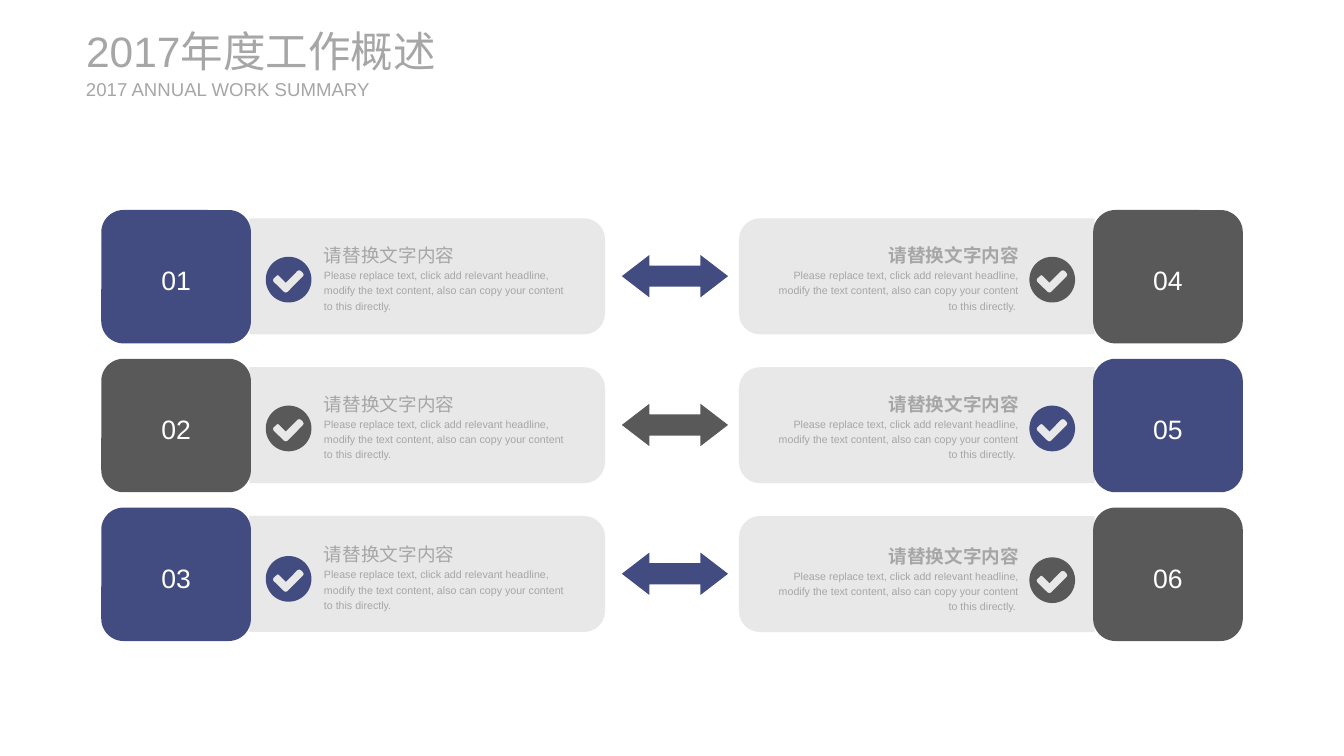
from copy import deepcopy
from math import cos, pi, sin

from lxml import etree
from pptx import Presentation
from pptx.dml.color import RGBColor
from pptx.enum.shapes import MSO_SHAPE
from pptx.enum.text import MSO_ANCHOR, MSO_AUTO_SIZE, PP_ALIGN
from pptx.oxml.ns import qn
from pptx.util import Pt

ROUND_RECT = MSO_SHAPE.ROUNDED_RECTANGLE
HALF_ROUND = MSO_SHAPE.ROUND_2_SAME_RECTANGLE
ARROW = MSO_SHAPE.LEFT_RIGHT_ARROW
TOP, MIDDLE = MSO_ANCHOR.TOP, MSO_ANCHOR.MIDDLE
LEFT, CENTER, RIGHT = PP_ALIGN.LEFT, PP_ALIGN.CENTER, PP_ALIGN.RIGHT
GROW = MSO_AUTO_SIZE.SHAPE_TO_FIT_TEXT

BLUE, DARK, PANEL, GRAY, WHITE = "424C80", "595959", "E6E6E6", "A6A6A6", "FFFFFF"
HEADINGS = [
    ("2017年度工作概述", 32, (64.8, 18.7, 311, 38.9)),
    ("2017 ANNUAL WORK SUMMARY", 14, (64.8, 58.3, 221, 17.3)),
]
ITEM_TITLE = "请替换文字内容"
ITEM_BODY = ("Please replace text, click add relevant headline, modify the text "
             "content, also can copy your content to this directly.")
SIDES = [
    {"items": [("01", BLUE, 0), ("02", DARK, 0), ("03", BLUE, 1.2)],
     "number": 76.3, "panel": 187.9, "turn": 90, "icon": 200.2,
     "text": 244, "align": LEFT, "bold": False, "tail": ""},
    {"items": [("04", DARK, 0), ("05", BLUE, 0), ("06", DARK, 2.2)],
     "number": 823.4, "panel": 556.6, "turn": 270, "icon": 775.4,
     "text": 581.7, "align": RIGHT, "bold": True, "tail": " "},
]
ARROW_COLORS = [BLUE, DARK, BLUE]
ROW_TOP, ROW_STEP = 158.2, 112.1
NUMBER_W, NUMBER_H = 112.7, 100.5
PANEL_W, PANEL_H = 267.8, 87.4
ICON_R = 17.2
TICK = [(28.1, 12.2), (26.6, 10.6), (25.2, 10.1), (23.8, 10.6), (15.1, 19.4),
        (10.1, 14.4), (9.1, 13.7), (8.2, 14.2), (5.8, 16.4), (5.4, 17.5),
        (5.8, 18.8), (13.7, 26.5), (15, 27), (16.4, 26.5), (28.1, 14.7),
        (28.6, 13.5)]


def rgb(color):
    return RGBColor.from_string(color)


def paint(shape, color):
    shape.shadow.inherit = False
    shape.fill.solid()
    shape.fill.fore_color.rgb = rgb(color)
    shape.line.fill.background()


def add_shape(kind, x, y, w, h, color):
    shape = s.shapes.add_shape(kind, Pt(x), Pt(y), Pt(w), Pt(h))
    paint(shape, color)
    return shape


def setup_frame(shape, anchor):
    tf = shape.text_frame
    frame = {"word_wrap": True, "vertical_anchor": anchor, "margin_left": 0,
             "margin_right": 0, "margin_top": 0, "margin_bottom": 0}
    for name, value in frame.items():
        setattr(tf, name, value)
    return tf


def add_textbox(x, y, w, h, anchor):
    tf = setup_frame(s.shapes.add_textbox(Pt(x), Pt(y), Pt(w), Pt(h)), anchor)
    tf.auto_size = GROW
    return tf


def add_run(p, text, size, color, bold=False):
    r = p.add_run()
    r.text = text
    for name, value in {"size": Pt(size), "name": "Arial", "bold": bold}.items():
        setattr(r.font, name, value)
    r.font.color.rgb = rgb(color)
    return r


def add_panel(x, y, turn):
    dx = (PANEL_W - PANEL_H) / 2
    panel = add_shape(HALF_ROUND, x + dx, y - dx, PANEL_H, PANEL_W, PANEL)
    panel.rotation = turn
    panel.adjustments[0] = 0.18
    fill = panel.fill.fore_color._xFill.find(qn("a:srgbClr"))
    etree.SubElement(fill, qn("a:alpha"), val="90000")


def add_check(x, y, color):
    circle = [(ICON_R + ICON_R * cos(i * pi / 36), ICON_R + ICON_R * sin(i * pi / 36))
              for i in range(72)]
    outlines = [[(px * 100, py * 100) for px, py in pts] for pts in (circle, TICK)]
    fb = s.shapes.build_freeform(*outlines[0][0], scale=Pt(1) / 100)
    fb.add_line_segments(outlines[0][1:], close=True)
    fb.move_to(*outlines[1][0])
    fb.add_line_segments(outlines[1][1:], close=True)
    paint(fb.convert_to_shape(Pt(x), Pt(y)), color)


def add_item_text(x, y, side):
    p = add_textbox(x, y, 185.8, 55.4, TOP).paragraphs[0]
    for name, value in {"alignment": side["align"], "line_spacing": 1.2,
                        "space_before": Pt(2.8)}.items():
        setattr(p, name, value)
    r = add_run(p, ITEM_TITLE, 14, GRAY, side["bold"])
    p.add_line_break()
    p._p[-1].append(deepcopy(r._r.rPr))
    add_run(p, ITEM_BODY + side["tail"], 8, GRAY)


def add_number(x, y, text, color):
    box = add_shape(ROUND_RECT, x, y, NUMBER_W, NUMBER_H, color)
    p = setup_frame(box, MIDDLE).paragraphs[0]
    for name, value in {"alignment": CENTER, "line_spacing": 1.2,
                        "space_after": Pt(7)}.items():
        setattr(p, name, value)
    add_run(p, text, 20, WHITE)


prs = Presentation()
prs.slide_width, prs.slide_height = Pt(1012.3), Pt(569.5)
s = prs.slides.add_slide(prs.slide_layouts[6])

for text, size, box in HEADINGS:
    add_run(add_textbox(*box, MIDDLE).paragraphs[0], text, size, GRAY)

for side in SIDES:
    for row, (number, color, nudge) in enumerate(side["items"]):
        y = ROW_TOP + row * ROW_STEP
        add_panel(side["panel"], y + 6.3, side["turn"])
        add_check(side["icon"], y + 35.3 + nudge, color)
        add_item_text(side["text"], y + 22.4 + nudge, side)
        add_number(side["number"], y, number, color)

for row, color in enumerate(ARROW_COLORS):
    arrow = add_shape(ARROW, 468.4, ROW_TOP + row * ROW_STEP + 33.9, 80, 31.9, color)
    arrow.adjustments[0], arrow.adjustments[1] = 0.5, 0.65

prs.save("out.pptx")
